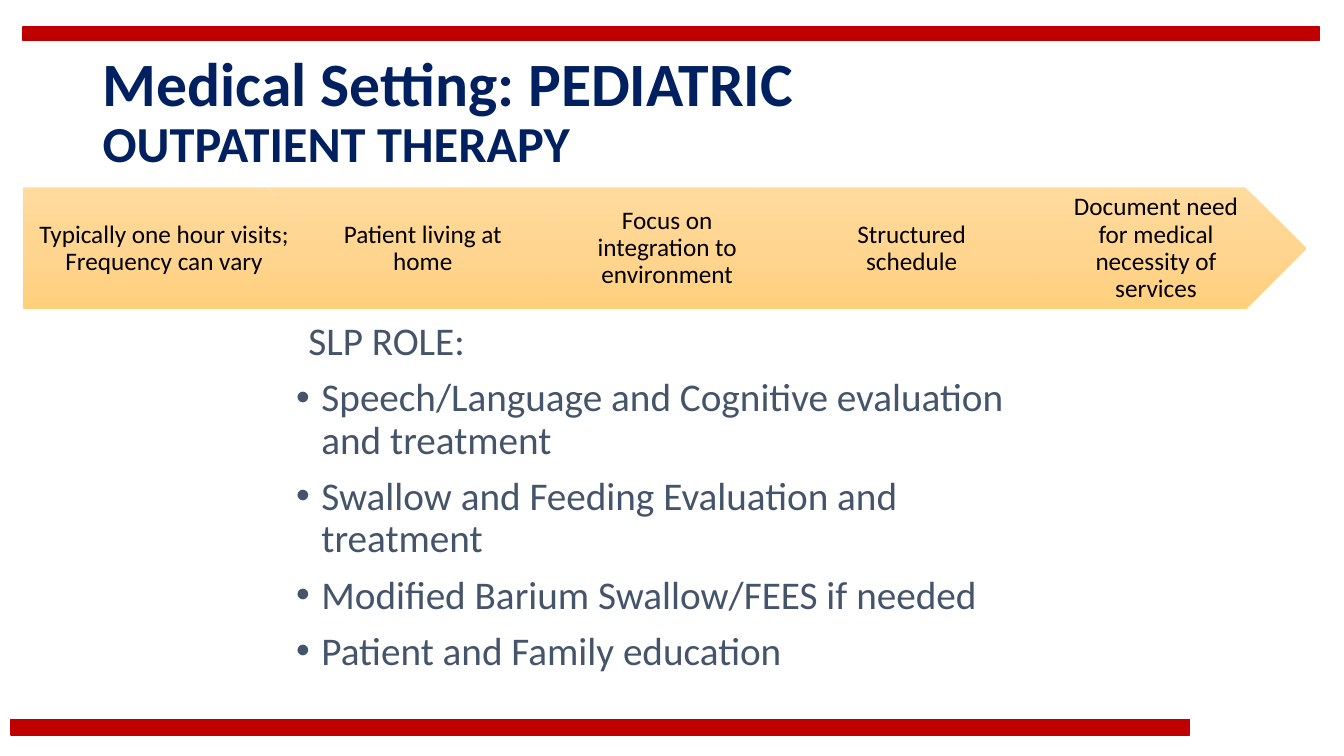
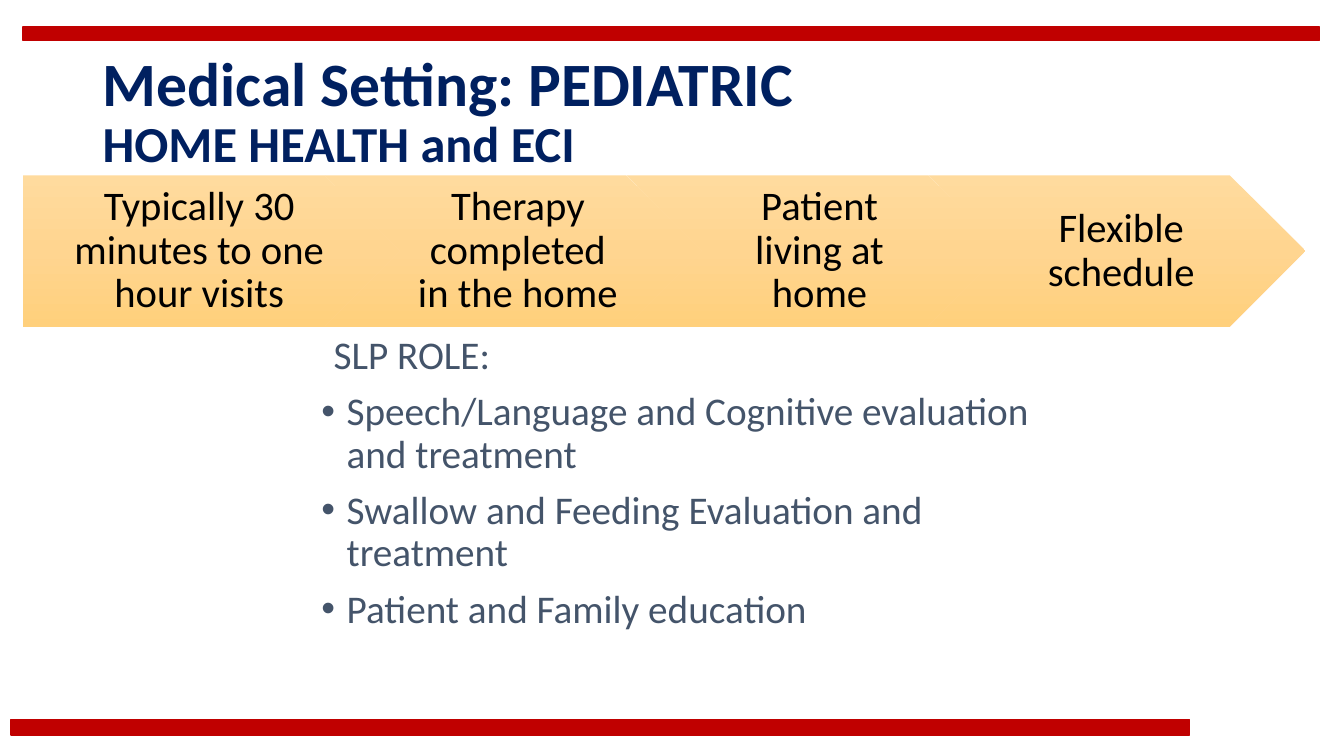
from copy import deepcopy
from dataclasses import dataclass

from lxml import etree
from pptx import Presentation
from pptx import util as u
from pptx.dml.color import RGBColor
from pptx.enum import shapes, text
from pptx.oxml import ns


@dataclass(frozen=True)
class Theme:
    font: str = "Calibri"
    bar: RGBColor = RGBColor(0xC0, 0x00, 0x00)
    title: RGBColor = RGBColor(0x00, 0x20, 0x60)
    body: RGBColor = RGBColor(0x44, 0x54, 0x6A)
    step: RGBColor = RGBColor(0x00, 0x00, 0x00)
    gradient: tuple = (
        (0, RGBColor(0xFF, 0xDB, 0x9E)),
        (0.5, RGBColor(0xFF, 0xD5, 0x90)),
        (1, RGBColor(0xFF, 0xD0, 0x7C)),
    )
    title_size: int = 44
    subtitle_size: int = 36
    body_size: int = 28


@dataclass(frozen=True)
class Box:
    left: float
    top: float
    width: float
    height: float

    def lengths(self) -> tuple:
        return tuple(u.Inches(v) for v in (self.left, self.top, self.width, self.height))


@dataclass(frozen=True)
class Process:
    first: Box
    size: int
    first_inset: float
    inset: float
    right_inset: float
    edge_inset: float
    steps: tuple


@dataclass(frozen=True)
class Setting:
    subtitle: str
    process: Process
    role_box: Box
    roles: tuple


THEME = Theme()
HEADING = "Medical Setting: PEDIATRIC"
ROLE_HEADING = "SLP ROLE:"
TITLE_BOX = Box(0.92, 0.4, 11.5, 1.45)
BARS = (Box(0.11, 7.14, 11.69, 0.15), Box(0.23, 0.27, 12.86, 0.13))
STEP_PITCH = 0.8
LINE_SPACING = 0.9

EVALUATION = "Speech/Language and Cognitive evaluation and treatment"
FEEDING = "Swallow and Feeding Evaluation and treatment"
EDUCATION = "Patient and Family education"

SETTINGS = (
    Setting(
        "OUTPATIENT THERAPY",
        Process(
            Box(0.23, 1.86, 3.03, 1.21), 18, 0.1, 0.08, 0.03, 0.05,
            (
                "Typically one hour visits; Frequency can vary",
                "Patient living at home",
                "Focus on integration to environment",
                "Structured schedule",
                "Document need for medical necessity of services",
            ),
        ),
        Box(2.84, 3.14, 7.43, 4.3),
        (EVALUATION, FEEDING, "Modified Barium Swallow/FEES if needed", EDUCATION),
    ),
    Setting(
        "HOME HEALTH and ECI",
        Process(
            Box(0.23, 1.74, 3.74, 1.5), 29, 0.17, 0.13, 0.04, 0.08,
            (
                "Typically 30 minutes to one hour visits",
                "Therapy completed in the home",
                "Patient living at home",
                "Flexible schedule",
            ),
        ),
        Box(3.09, 3.28, 7.68, 3.27),
        (EVALUATION, FEEDING, EDUCATION),
    ),
)


def style(paragraph, color: RGBColor, size: int, bold: bool = False) -> None:
    paragraph.line_spacing = LINE_SPACING
    font = paragraph.font
    font.name, font.size, font.bold = THEME.font, u.Pt(size), bold
    font.color.rgb = color


def indent(paragraph, margin: float, first_line: float, bullet: bool) -> None:
    properties = paragraph._p.get_or_add_pPr()
    properties.set("marL", str(u.Inches(margin)))
    properties.set("indent", str(u.Inches(first_line)))
    if bullet:
        etree.SubElement(properties, ns.qn("a:buFont"), typeface="Arial")
        etree.SubElement(properties, ns.qn("a:buChar"), char="•")


def add_bar(slide, box: Box) -> None:
    bar = slide.shapes.add_shape(shapes.MSO_SHAPE.RECTANGLE, *box.lengths())
    bar.shadow.inherit = False
    bar.fill.solid()
    bar.fill.fore_color.rgb = THEME.bar
    bar.line.color.rgb = THEME.bar
    bar.line.width = u.Pt(1)


def add_title(slide, subtitle: str) -> None:
    frame = slide.shapes.add_textbox(*TITLE_BOX.lengths()).text_frame
    frame.word_wrap = True
    frame.vertical_anchor = text.MSO_ANCHOR.MIDDLE
    title = frame.paragraphs[0]
    style(title, THEME.title, THEME.title_size, bold=True)
    title.add_run().text = HEADING
    title.add_line_break()
    second_line = title.add_run()
    second_line.text = subtitle
    second_line.font.size = u.Pt(THEME.subtitle_size)


def add_roles(slide, box: Box, roles: tuple) -> None:
    frame = slide.shapes.add_textbox(*box.lengths()).text_frame
    frame.word_wrap = True
    heading = frame.paragraphs[0]
    heading.text = ROLE_HEADING
    indent(heading, 0.12, 0, bullet=False)
    style(heading, THEME.body, THEME.body_size)
    for role in roles:
        item = frame.add_paragraph()
        item.text = role
        indent(item, 0.25, -0.25, bullet=True)
        item.space_before = u.Pt(10)
        style(item, THEME.body, THEME.body_size)


def fill_gradient(shape) -> None:
    shape.fill.gradient()
    shape.fill.gradient_angle = 270
    stops = shape._element.spPr.find(ns.qn("a:gradFill")).find(ns.qn("a:gsLst"))
    stops.insert(1, deepcopy(stops[0]))
    for stop, (position, color) in zip(shape.fill.gradient_stops, THEME.gradient):
        stop.position = position
        stop.color.rgb = color


def add_process(slide, process: Process) -> None:
    first = process.first
    for index, label in enumerate(process.steps):
        box = Box(first.left + index * STEP_PITCH * first.width, first.top, first.width, first.height)
        outline = shapes.MSO_SHAPE.CHEVRON if index else shapes.MSO_SHAPE.PENTAGON
        step = slide.shapes.add_shape(outline, *box.lengths())
        step.shadow.inherit = False
        step.line.fill.background()
        fill_gradient(step)
        frame = step.text_frame
        frame.word_wrap = True
        frame.vertical_anchor = text.MSO_ANCHOR.MIDDLE
        frame.margin_left = u.Inches(process.inset if index else process.first_inset)
        frame.margin_right = u.Inches(process.right_inset)
        frame.margin_top = frame.margin_bottom = u.Inches(process.edge_inset)
        paragraph = frame.paragraphs[0]
        paragraph.text = label
        paragraph.alignment = text.PP_ALIGN.CENTER
        style(paragraph, THEME.step, process.size)


def main() -> None:
    deck = Presentation()
    deck.slide_width, deck.slide_height = u.Inches(13.33), u.Inches(7.5)
    for setting in SETTINGS:
        slide = deck.slides.add_slide(deck.slide_layouts[6])
        for bar in BARS:
            add_bar(slide, bar)
        add_title(slide, setting.subtitle)
        add_roles(slide, setting.role_box, setting.roles)
        add_process(slide, setting.process)
    deck.save("out.pptx")


if __name__ == "__main__":
    main()
